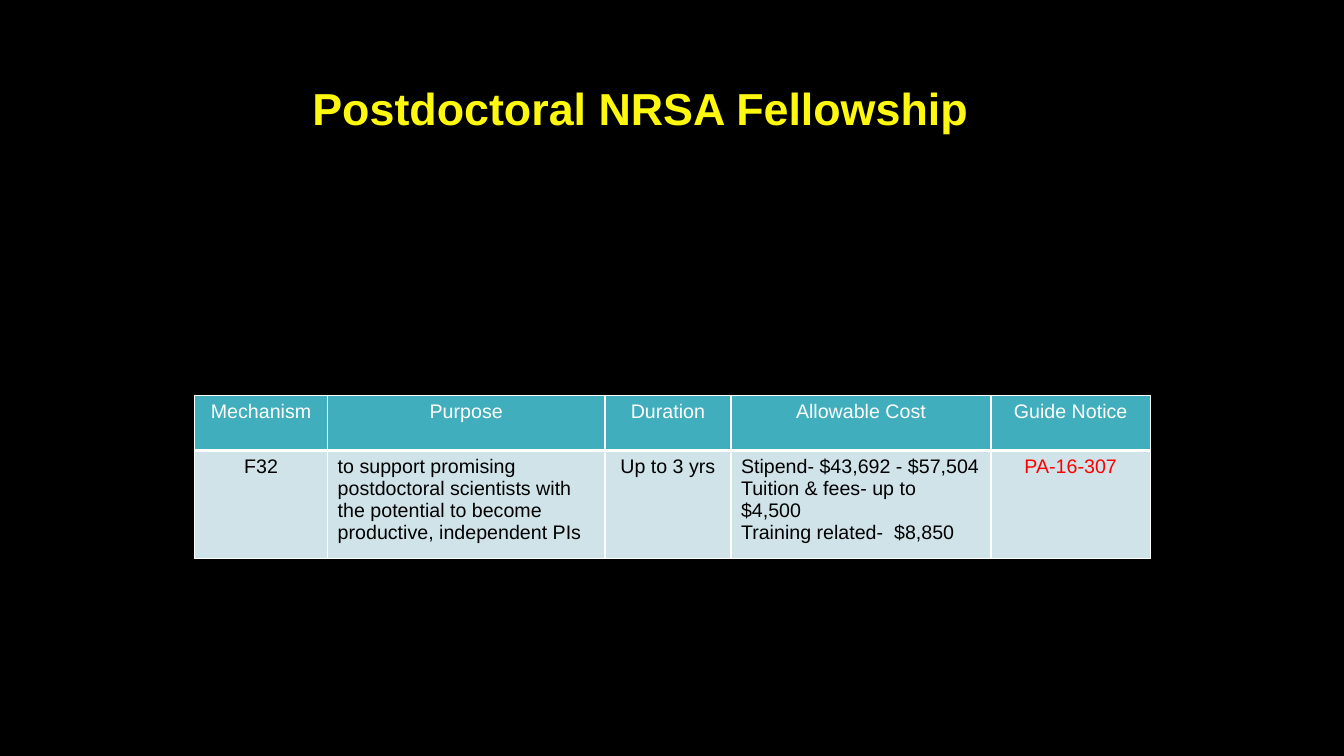
from lxml import etree
from pptx import Presentation
from pptx.dml.color import RGBColor
from pptx.enum.text import PP_ALIGN as Align
from pptx.oxml.ns import qn
from pptx.util import Inches, Pt

BLACK = RGBColor(0x00, 0x00, 0x00)
WHITE = RGBColor(0xFF, 0xFF, 0xFF)
YELLOW = RGBColor(0xFE, 0xF8, 0x0E)
RED = RGBColor(0xFF, 0x00, 0x00)
TEAL = RGBColor(0x41, 0xAE, 0xBD)
PALE_TEAL = RGBColor(0xCF, 0xE3, 0xE8)

COLUMN_WIDTHS = [1.32, 2.75, 1.25, 2.58, 1.58]
ROW_HEIGHTS = [0.55, 1.07]
ROWS = [
    ["Mechanism", "Purpose", "Duration", "Allowable Cost", "Guide Notice"],
    [
        "F32",
        "to support promising postdoctoral scientists with the potential "
        "to become productive, independent PIs",
        "Up to 3 yrs",
        "Stipend- $43,692 - $57,504\n"
        "Tuition & fees- up to $4,500\n"
        "Training related-  $8,850",
        "PA-16-307",
    ],
]
LEFT_ALIGNED = ["Purpose", "Allowable Cost"]


def add_borders(cell, bottom_width):
    properties = cell._tc.get_or_add_tcPr()
    for side, width in (("L", 1), ("R", 1), ("T", 1), ("B", bottom_width)):
        line = etree.SubElement(properties, qn(f"a:ln{side}"), w=str(Pt(width)))
        fill = etree.SubElement(line, qn("a:solidFill"))
        etree.SubElement(fill, qn("a:srgbClr"), val=str(WHITE))


def style_font(font, size, color, bold):
    font.name = "Arial"
    font.size = Pt(size)
    font.color.rgb = color
    font.bold = bold


presentation = Presentation()
presentation.slide_width = Inches(13.33)
presentation.slide_height = Inches(7.5)
slide = presentation.slides.add_slide(presentation.slide_layouts[6])
slide.background.fill.solid()
slide.background.fill.fore_color.rgb = BLACK

# Title
title = slide.shapes.add_textbox(Inches(3), Inches(0.75), Inches(7.5), Inches(0.64))
title.text_frame.word_wrap = True
title.text_frame.text = "Postdoctoral NRSA Fellowship"
style_font(title.text_frame.paragraphs[0].runs[0].font, 32, YELLOW, True)

# Fellowship table
table = slide.shapes.add_table(
    len(ROWS), len(COLUMN_WIDTHS), Inches(1.93), Inches(3.92),
    Inches(sum(COLUMN_WIDTHS)), Inches(sum(ROW_HEIGHTS)),
).table
for column, width in zip(table.columns, COLUMN_WIDTHS):
    column.width = Inches(width)
for row, height in zip(table.rows, ROW_HEIGHTS):
    row.height = Inches(height)

for row_index, texts in enumerate(ROWS):
    is_header = row_index == 0
    for column_index, text in enumerate(texts):
        heading = ROWS[0][column_index]
        cell = table.cell(row_index, column_index)
        add_borders(cell, 3 if is_header else 1)
        cell.fill.solid()
        cell.fill.fore_color.rgb = TEAL if is_header else PALE_TEAL
        if is_header:
            color = WHITE
        else:
            color = RED if heading == "Guide Notice" else BLACK
        left_aligned = not is_header and heading in LEFT_ALIGNED
        cell.text_frame.text = text
        for paragraph in cell.text_frame.paragraphs:
            paragraph.alignment = Align.LEFT if left_aligned else Align.CENTER
            style_font(paragraph.runs[0].font, 14, color, False)

presentation.save("out.pptx")
